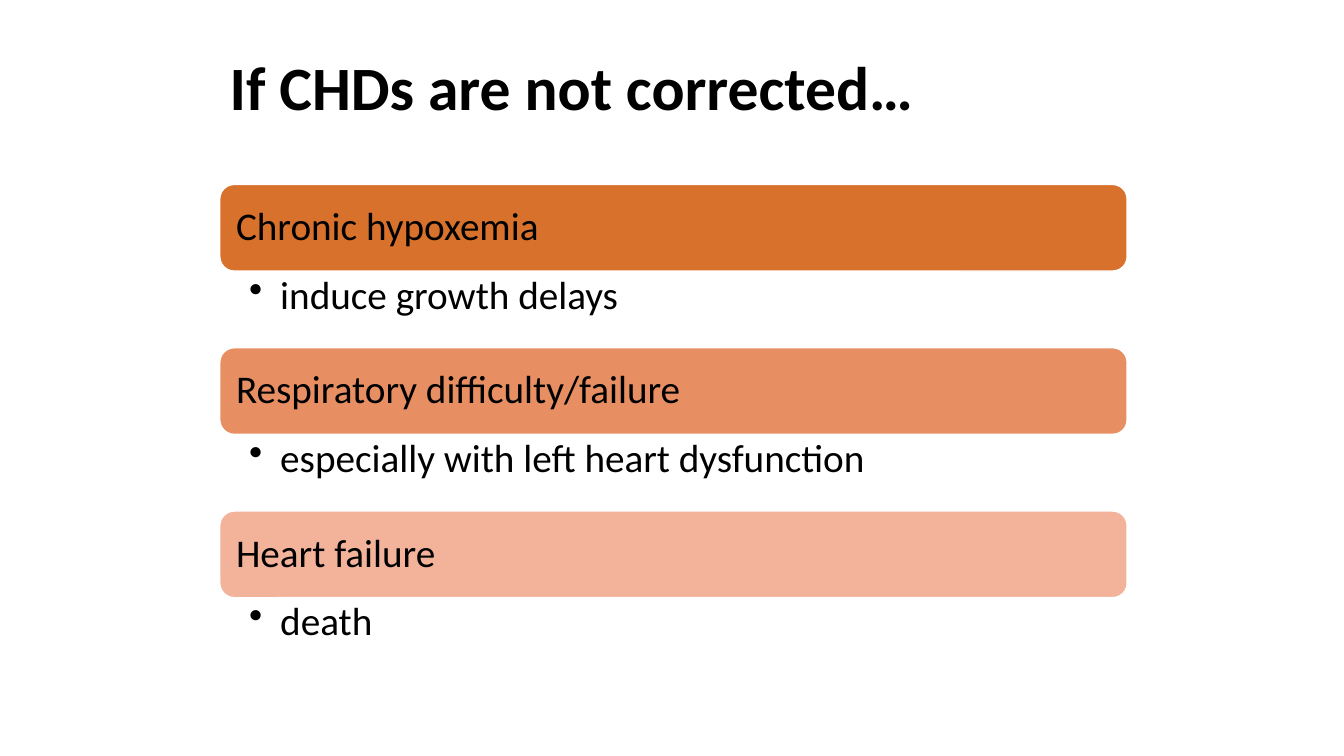
import pptx
import pptx.util
import pptx.dml.color
import pptx.enum.shapes
import pptx.enum.text
import pptx.oxml.ns
import lxml.etree

Inches = pptx.util.Inches
Anchor = pptx.enum.text.MSO_ANCHOR

TITLE = "If CHDs are not corrected…"
CONSEQUENCES = [
    ("Chronic hypoxemia", "induce growth delays", "D7712C"),
    ("Respiratory difficulty/failure", "especially with left heart dysfunction", "E78F62"),
    ("Heart failure", "death", "F3B39B"),
]
LEFT, WIDTH = 2.18, 9
FIRST_TOP, BAR_HEIGHT, DETAIL_HEIGHT = 1.83, 0.86, 0.76


def color(value):
    return pptx.dml.color.RGBColor.from_string(value)


def write(shape, text, size=28, bold=False, anchor=Anchor.MIDDLE,
          insets=(0.12, 0.12, 0.12, 0.12), after=0, bullet=False):
    frame = shape.text_frame
    frame.word_wrap = True
    frame.vertical_anchor = anchor
    (frame.margin_left, frame.margin_top,
     frame.margin_right, frame.margin_bottom) = map(Inches, insets)
    para = frame.paragraphs[0]
    para.alignment = pptx.enum.text.PP_ALIGN.LEFT
    para.line_spacing = 0.9
    para.space_after = pptx.util.Pt(after)
    span = para.add_run()
    span.text = text
    span.font.name = "Calibri"
    span.font.size = pptx.util.Pt(size)
    span.font.bold = bold
    span.font.color.rgb = color("000000")
    if bullet:
        properties = para._p.get_or_add_pPr()
        properties.set("marL", str(Inches(0.31)))
        properties.set("indent", str(-Inches(0.31)))
        mark = lxml.etree.SubElement(properties, pptx.oxml.ns.qn("a:buChar"))
        mark.set("char", "•")


def add_box(page, top, height):
    return page.shapes.add_textbox(Inches(LEFT), Inches(top), Inches(WIDTH), Inches(height))


def add_bar(page, top, fill):
    bar = page.shapes.add_shape(
        pptx.enum.shapes.MSO_SHAPE.ROUNDED_RECTANGLE,
        Inches(LEFT), Inches(top), Inches(WIDTH), Inches(BAR_HEIGHT))
    bar.shadow.inherit = False
    bar.fill.solid()
    bar.fill.fore_color.rgb = color(fill)
    bar.line.color.rgb = color("FFFFFF")
    bar.line.width = pptx.util.Pt(1)
    return bar


def main():
    deck = pptx.Presentation()
    deck.slide_width, deck.slide_height = Inches(13.33), Inches(7.5)
    page = deck.slides.add_slide(deck.slide_layouts[6])
    write(add_box(page, 0.27, 1.25), TITLE, size=44, bold=True,
          insets=(0.1, 0.05, 0.1, 0.05))
    for index, (heading, detail, fill) in enumerate(CONSEQUENCES):
        top = FIRST_TOP + index * (BAR_HEIGHT + DETAIL_HEIGHT)
        write(add_bar(page, top, fill), heading)
        write(add_box(page, top + BAR_HEIGHT, DETAIL_HEIGHT), detail,
              anchor=Anchor.TOP, insets=(0.29, 0.04, 0.22, 0.04),
              after=5.6, bullet=True)
    deck.save("out.pptx")


if __name__ == "__main__":
    main()
